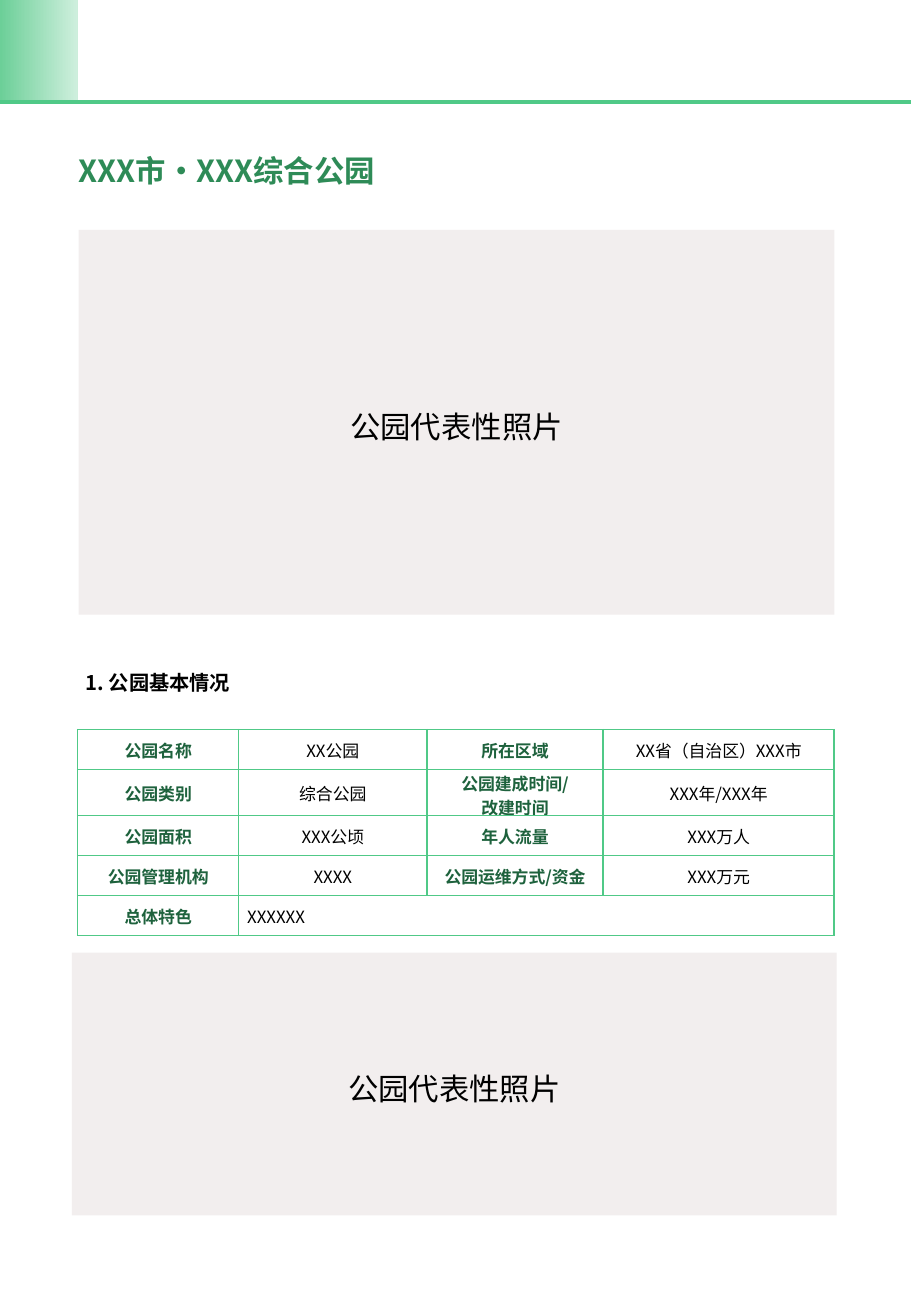
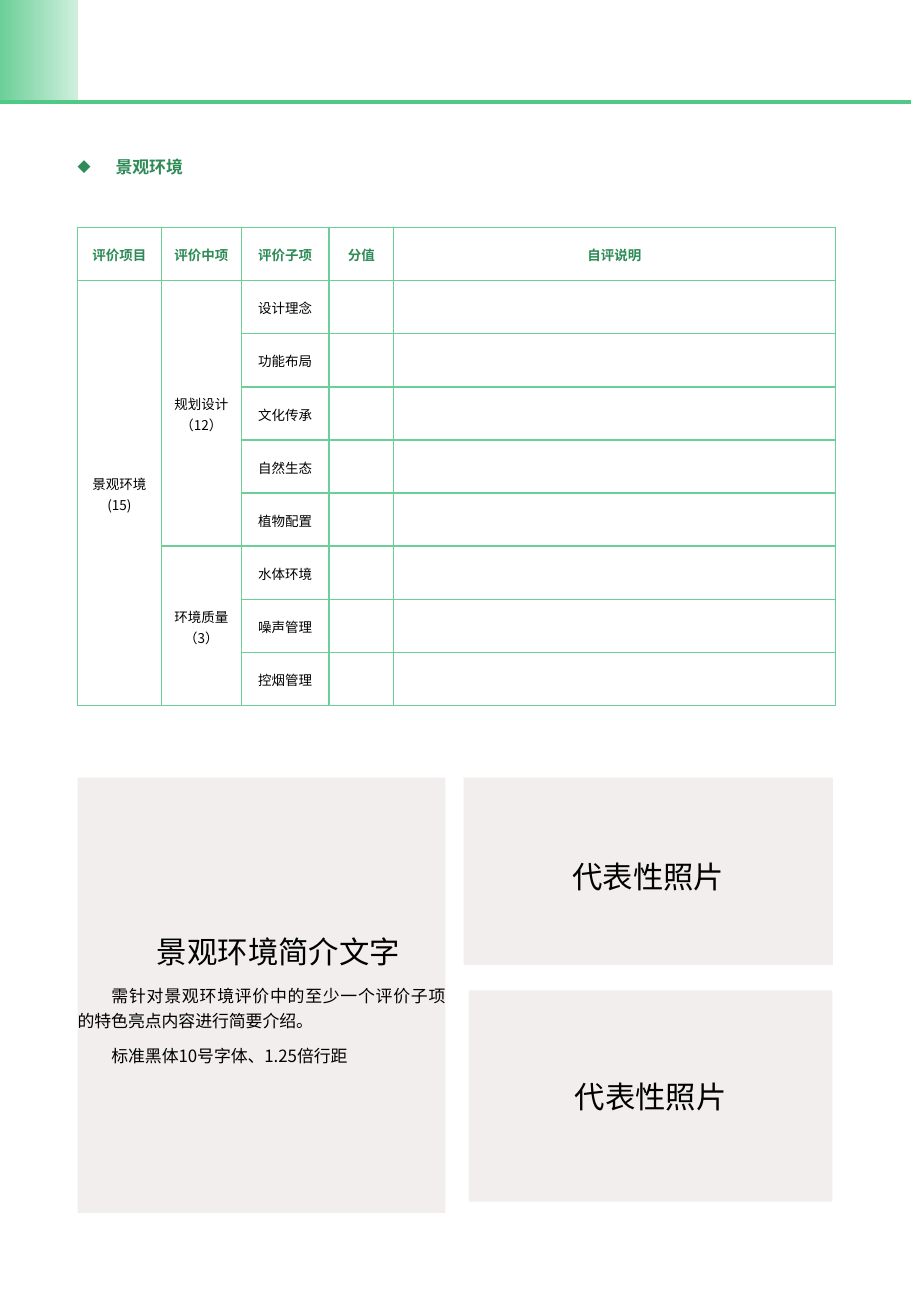
from dataclasses import dataclass
from typing import Optional

from lxml.etree import SubElement
from pptx import Presentation
from pptx.dml.color import RGBColor
from pptx.enum.shapes import MSO_CONNECTOR, MSO_SHAPE
from pptx.enum.text import MSO_ANCHOR, PP_ALIGN
from pptx.oxml.ns import qn
from pptx.util import Pt

FONT = "Noto Sans CJK SC"
BLACK, TITLE_GREEN, LABEL_GREEN = "000000", "2E8B57", "1E623D"
RULE_GREEN, LIGHT_GREEN, PALE_GREEN = "50C987", "6CCF98", "CEEFDD"
PANEL = "F2EEEE"
LEFT, CENTER, JUSTIFY = PP_ALIGN.LEFT, PP_ALIGN.CENTER, PP_ALIGN.JUSTIFY
DEFAULT_INSETS = (7.2, 3.6, 7.2, 3.6)
NO_INSETS = (0, 0, 0, 0)


@dataclass(frozen=True)
class Para:
    text: str
    size: float = 18
    color: str = BLACK
    bold: bool = False
    align: PP_ALIGN = CENTER
    spacing: float = 1.0
    after: float = 0
    margin: float = 0
    indent: float = 0
    bullet: str = ""


@dataclass(frozen=True)
class Box:
    left: float
    top: float
    width: float
    height: float
    paras: tuple[Para, ...]
    insets: tuple[float, ...] = DEFAULT_INSETS
    shape: Optional[MSO_SHAPE] = None
    fill: Optional[str] = None


@dataclass(frozen=True)
class Grid:
    left: float
    top: float
    cols: tuple[float, ...]
    rows: tuple[float, ...]
    cells: tuple[tuple[Para, ...], ...]
    spans: tuple[tuple[int, int, int, int], ...]
    insets: tuple[float, ...]
    border: str


def rgb(value: str) -> RGBColor:
    return RGBColor.from_string(value)


def write_para(p, para: Para) -> None:
    pPr = p._p.get_or_add_pPr()
    if para.margin or para.indent:
        pPr.set("marL", str(Pt(para.margin)))
        pPr.set("indent", str(Pt(para.indent)))
    if para.bullet:
        SubElement(pPr, qn("a:buChar")).set("char", para.bullet)
    p.alignment = para.align
    p.line_spacing = para.spacing
    p.space_after = Pt(para.after)
    if not para.text:
        SubElement(p._p, qn("a:endParaRPr")).set("sz", str(int(para.size * 100)))
        return
    r = p.add_run()
    r.text = para.text
    r.font.name = FONT
    r.font.size = Pt(para.size)
    r.font.bold = para.bold
    r.font.color.rgb = rgb(para.color)
    SubElement(r.font._element, qn("a:ea")).set("typeface", FONT)


def write_paras(tf, paras: tuple[Para, ...]) -> None:
    for i, para in enumerate(paras):
        write_para(tf.add_paragraph() if i else tf.paragraphs[0], para)


def set_insets(target, insets: tuple[float, ...]) -> None:
    (target.margin_left, target.margin_top,
     target.margin_right, target.margin_bottom) = map(Pt, insets)


def add_box(slide, box: Box) -> None:
    place = [Pt(v) for v in (box.left, box.top, box.width, box.height)]
    if box.shape is None:
        sp = slide.shapes.add_textbox(*place)
    else:
        sp = slide.shapes.add_shape(box.shape, *place)
        sp.shadow.inherit = False
        sp.line.fill.background()
        if box.fill:
            sp.fill.solid()
            sp.fill.fore_color.rgb = rgb(box.fill)
        else:
            sp.fill.background()
    tf = sp.text_frame
    tf.word_wrap = True
    tf.vertical_anchor = MSO_ANCHOR.TOP if box.shape is None else MSO_ANCHOR.MIDDLE
    set_insets(tf, box.insets)
    write_paras(tf, box.paras)


def set_borders(cell, color: str) -> None:
    tcPr = cell._tc.get_or_add_tcPr()
    for i, side in enumerate(("lnL", "lnR", "lnT", "lnB")):
        ln = SubElement(tcPr, qn(f"a:{side}"))
        ln.set("w", str(Pt(1)))
        fill = SubElement(ln, qn("a:solidFill"))
        SubElement(fill, qn("a:srgbClr")).set("val", color)
        tcPr.insert(i, ln)


def add_grid(slide, grid: Grid) -> None:
    frame = slide.shapes.add_table(
        len(grid.rows), len(grid.cols), Pt(grid.left), Pt(grid.top),
        Pt(sum(grid.cols)), Pt(sum(grid.rows)))
    table = frame.table
    table.first_row = table.horz_banding = False
    for col, width in zip(table.columns, grid.cols):
        col.width = Pt(width)
    for row, height in zip(table.rows, grid.rows):
        row.height = Pt(height)
    for i, row in enumerate(grid.cells):
        for j, para in enumerate(row):
            cell = table.cell(i, j)
            cell.fill.background()
            cell.vertical_anchor = MSO_ANCHOR.MIDDLE
            set_insets(cell, grid.insets)
            set_borders(cell, grid.border)
            write_paras(cell.text_frame, para)
    for top, left, bottom, right in grid.spans:
        table.cell(top, left).merge(table.cell(bottom, right))


def add_header(slide, layout) -> None:
    block = slide.shapes.add_shape(MSO_SHAPE.RECTANGLE, 0, 0, Pt(46), Pt(60.5))
    block.shadow.inherit = False
    block.line.fill.background()
    block.fill.gradient()
    block.fill.gradient_angle = 0
    for stop, color in zip(block.fill.gradient_stops, (LIGHT_GREEN, PALE_GREEN)):
        stop.color.rgb = rgb(color)
    rule = slide.shapes.add_connector(
        MSO_CONNECTOR.STRAIGHT, Pt(-0.7), Pt(60.5), Pt(541.4), Pt(60.5))
    rule.line.color.rgb = rgb(RULE_GREEN)
    rule.line.width = Pt(2.5)
    SubElement(rule.element.spPr, qn("a:effectLst"))
    for shape_id, sp in enumerate((block, rule), start=101):
        sp.element.xpath(".//p:cNvPr")[0].set("id", str(shape_id))
        layout.shapes.element.append(sp.element)


def photo(left: float, top: float, width: float, height: float,
          text: str, spacing: float = 1.25, after: float = 6) -> Box:
    return Box(left, top, width, height, (Para(text, spacing=spacing, after=after),),
               shape=MSO_SHAPE.RECTANGLE, fill=PANEL)


def lines(text: str, **style) -> tuple[Para, ...]:
    return tuple(Para(line, **style) for line in text.split("\n"))


def profile_grid() -> Grid:
    facts = (
        ("公园名称", "XX公园", "所在区域", "XX省（自治区）XXX市"),
        ("公园类别", "综合公园", "公园建成时间/\n改建时间", "XXX年/XXX年"),
        ("公园面积", "XXX公顷", "年人流量", "XXX万人"),
        ("公园管理机构", "XXXX", "公园运维方式/资金", "XXX万元"),
        ("总体特色", "XXXXXX", "", ""),
    )
    last = len(facts) - 1
    cells = tuple(
        tuple(lines(text, size=10, bold=j % 2 == 0,
                    color=BLACK if j % 2 else LABEL_GREEN,
                    align=JUSTIFY if (i, j) == (last, 1) else CENTER)
              for j, text in enumerate(row))
        for i, row in enumerate(facts))
    return Grid(46, 432.4, (95.5, 111.5, 104.5, 137), (23.7, 27.3, 23.7, 23.7, 23.7),
                cells, ((last, 1, last, 3),), (5, 0.7, 5, 0), RULE_GREEN)


def score_grid() -> Grid:
    heads = ("评价项目", "评价中项", "评价子项", "分值", "自评说明")
    groups = (
        ("规划设计（12）", ("设计理念", "功能布局", "文化传承", "自然生态", "植物配置")),
        ("环境质量（3）", ("水体环境", "噪声管理", "控烟管理")),
    )
    rows = [heads]
    spans = []
    for group, items in groups:
        start = len(rows)
        for i, item in enumerate(items):
            project = "景观环境(15)" if len(rows) == 1 else ""
            rows.append((project, "" if i else group, item, "", ""))
        spans.append((start, 1, len(rows) - 1, 1))
    spans.append((1, 0, len(rows) - 1, 0))
    cells = tuple(
        tuple(lines(text, size=8, spacing=1.07, bold=i == 0,
                    color=BLACK if i else TITLE_GREEN) for text in row)
        for i, row in enumerate(rows))
    return Grid(46, 134.8, (49.7, 47.4, 52, 38.2, 262), (31.5,) * len(rows),
                cells, tuple(spans), (5, 3.6, 5, 3.6), LIGHT_GREEN)


def build_profile(slide) -> None:
    add_box(slide, Box(46.6, 90, 281.5, 30, (
        Para("XXX市·XXX综合公园", 18, TITLE_GREEN, True, JUSTIFY),), (0, 0, 0, 8.6)))
    add_box(slide, Box(42.6, 390.4, 204.5, 24.5, (
        Para("1. 公园基本情况", 12, BLACK, True, LEFT, 1.25),),
        shape=MSO_SHAPE.ROUNDED_RECTANGLE))
    add_grid(slide, profile_grid())
    add_box(slide, photo(46.6, 136.2, 448, 228.2, "公园代表性照片"))
    add_box(slide, photo(42.6, 564.7, 453.4, 155.7, "公园代表性照片"))


def build_landscape(slide) -> None:
    body = dict(spacing=1.25, after=6, indent=20)
    add_box(slide, Box(46, 461, 218, 258, (
        Para("景观环境简介文字", **body),
        Para("需针对景观环境评价中的至少一个评价子项的特色亮点内容进行简要介绍。",
             10, align=JUSTIFY, **body),
        Para("标准黑体10号字体、1.25倍行距", 10, align=JUSTIFY, **body),
    ), NO_INSETS, MSO_SHAPE.RECTANGLE, PANEL))
    add_box(slide, Box(46, 90, 99.4, 13.7, (
        Para("景观环境", 10, TITLE_GREEN, True, JUSTIFY, 1.25, 12, 22.5, -22.5, "◆"),
    ), NO_INSETS))
    add_grid(slide, score_grid())
    add_box(slide, photo(274.8, 461, 219, 111, "代表性照片"))
    add_box(slide, photo(278, 587, 215.5, 125.3, "代表性照片", spacing=1, after=0))


def main() -> None:
    prs = Presentation()
    prs.slide_width, prs.slide_height = Pt(540), Pt(780)
    layout = prs.slide_layouts[6]
    profile, landscape = (prs.slides.add_slide(layout) for _ in range(2))
    add_header(profile, layout)
    build_profile(profile)
    build_landscape(landscape)
    prs.save("out.pptx")


if __name__ == "__main__":
    main()
